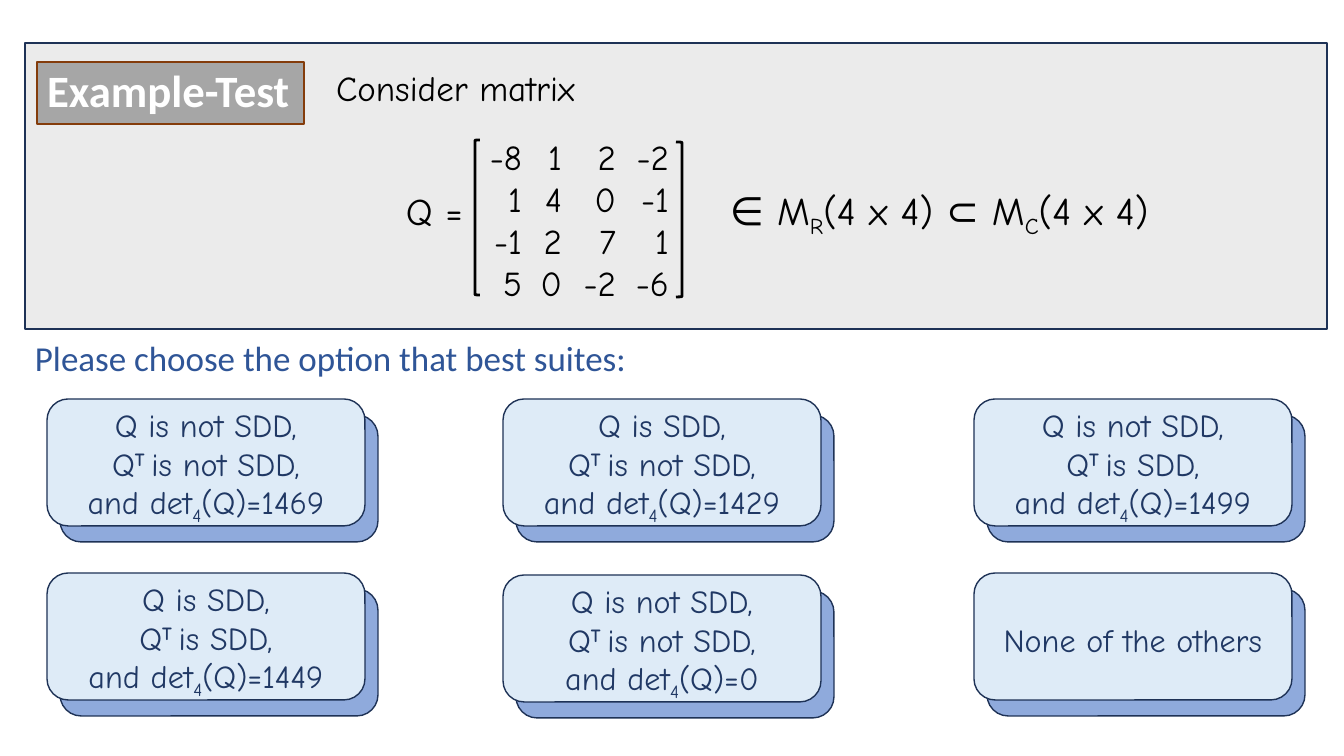
"""Build a quiz slide that asks about a 4 x 4 matrix, with six answer cards."""
import pptx
import pptx.util
import pptx.dml.color
import pptx.enum.shapes
import pptx.enum.text
import pptx.oxml.ns
import lxml.etree

PX = 914400 / 100.8
COLORS = {
    "panel": "D9D9D9", "navy": "1E3256", "tag": "A6A6A6", "brown": "843C0B",
    "white": "FFFFFF", "black": "000000", "question": "2F5597",
    "card": "DEEBF7", "back": "8FAADC", "answer": "203864",
}
SHAPE = pptx.enum.shapes.MSO_SHAPE
ALIGN = pptx.enum.text.PP_ALIGN
MIDDLE = pptx.enum.text.MSO_ANCHOR.MIDDLE
qn = pptx.oxml.ns.qn


def write(p, text, size=25, color="black", font="Comic Neue", bold=False, base=0):
    r = p.add_run()
    r.text = text
    r.font.size = pptx.util.Pt(size)
    r.font.name = font
    r.font.bold = bold
    r.font.color.rgb = pptx.dml.color.RGBColor.from_string(COLORS[color])
    if base:
        r.font._element.set("baseline", str(base * 1000))


def draw(kind, x, y, w, h, fill=None, line="navy", width=1):
    sp = s.shapes.add_shape(kind, *[round(n * PX) for n in (x, y, w, h)])
    sp.shadow.inherit = False
    if fill:
        sp.fill.solid()
        sp.fill.fore_color.rgb = pptx.dml.color.RGBColor.from_string(COLORS[fill])
    else:
        sp.fill.background()
    sp.line.color.rgb = pptx.dml.color.RGBColor.from_string(COLORS[line])
    sp.line.width = pptx.util.Pt(width)
    return sp


prs = pptx.Presentation()
prs.slide_width, prs.slide_height = round(1344 * PX), round(756 * PX)
s = prs.slides.add_slide(prs.slide_layouts[5])

panel = draw(SHAPE.RECTANGLE, 25, 43, 1302, 286, "panel")
solid = panel.fill._xPr.find(qn("a:solidFill"))
lxml.etree.SubElement(solid[0], qn("a:alpha"), val="50000")

title = s.shapes.title
title.element.addprevious(panel.element)
title.left, title.top, title.width, title.height = [round(n * PX) for n in (37, 62, 267, 62)]
title.fill.solid()
title.fill.fore_color.rgb = pptx.dml.color.RGBColor.from_string(COLORS["tag"])
title.line.color.rgb = pptx.dml.color.RGBColor.from_string(COLORS["brown"])
title.line.width = pptx.util.Pt(2)
tf = title.text_frame
tf.auto_size = pptx.enum.text.MSO_AUTO_SIZE.NONE
tf.vertical_anchor = MIDDLE
p = tf.paragraphs[0]
p.alignment = ALIGN.LEFT
p.line_spacing = 0.9
write(p, "Example-Test", size=32, color="white", font="Calibri", bold=True)

draw(SHAPE.LEFT_BRACKET, 475, 140, 5, 155, line="black", width=2)
draw(SHAPE.RIGHT_BRACKET, 676, 142, 6, 155, line="black", width=2)

frames = []
for x, y, w, h in [(336, 67, 400, 42), (35, 337, 950, 42), (406, 186, 774, 50), (485, 136, 200, 170)]:
    tf = s.shapes.add_textbox(*[round(n * PX) for n in (x, y, w, h)]).text_frame
    tf.word_wrap = True
    tf.margin_left = tf.margin_right = tf.margin_top = tf.margin_bottom = 0
    frames.append(tf)
intro, question, equation, matrix = frames

write(intro.paragraphs[0], "Consider matrix")
write(question.paragraphs[0], "Please choose the option that best suites:", color="question", font="Calibri")

p = equation.paragraphs[0]
write(p, "Q =\t", size=27)
for text, base in [("∈ M", 0), ("R", -25), ("(4 x 4) ⊂ M", 0), ("C", -25), ("(4 x 4)", 0)]:
    write(p, text, size=28, base=base)

Q = [(-8, 1, 2, -2), (1, 4, 0, -1), (-1, 2, 7, 1), (5, 0, -2, -6)]
for i, row in enumerate(Q):
    p = matrix.add_paragraph() if i else matrix.paragraphs[0]
    write(p, "".join(f"\t{n}" for n in row))

for tf, stops, side in [(equation, [324], "l"), (matrix, [37, 77, 131, 184], "r")]:
    for p in tf.paragraphs:
        tabs = lxml.etree.SubElement(p._p.get_or_add_pPr(), qn("a:tabLst"))
        for stop in stops:
            lxml.etree.SubElement(tabs, qn("a:tab"), pos=str(round(stop * PX)), algn=side)

cards = [
    (47, 399, "is not SDD,", "is not SDD,", 1469),
    (503, 399, "is SDD,", "is not SDD,", 1429),
    (974, 399, "is not SDD,", "is SDD,", 1499),
    (47, 573, "is SDD,", "is SDD,", 1449),
    (503, 575, "is not SDD,", "is not SDD,", 0),
    (974, 573, None, None, None),
]
for x, y, q, transpose, det in cards:
    draw(SHAPE.ROUNDED_RECTANGLE, x + 13, y + 16, 318, 127, "back")
    tf = draw(SHAPE.ROUNDED_RECTANGLE, x, y, 318, 127, "card").text_frame
    tf.word_wrap = True
    tf.vertical_anchor = MIDDLE
    tf.margin_top, tf.margin_bottom = round(7 * PX), 0
    lines = [[("None of the others", 0)]]
    if q:
        lines = [
            [(f"Q {q}", 0)],
            [("Q", 0), ("T ", 30), (transpose, 0)],
            [("and det", 0), ("4", -25), (f"(Q)={det}", 0)],
        ]
    for i, line in enumerate(lines):
        p = tf.add_paragraph() if i else tf.paragraphs[0]
        p.alignment = ALIGN.CENTER
        for text, base in line:
            write(p, text, size=23, color="answer", bold=base > 0, base=base)

prs.save("out.pptx")
